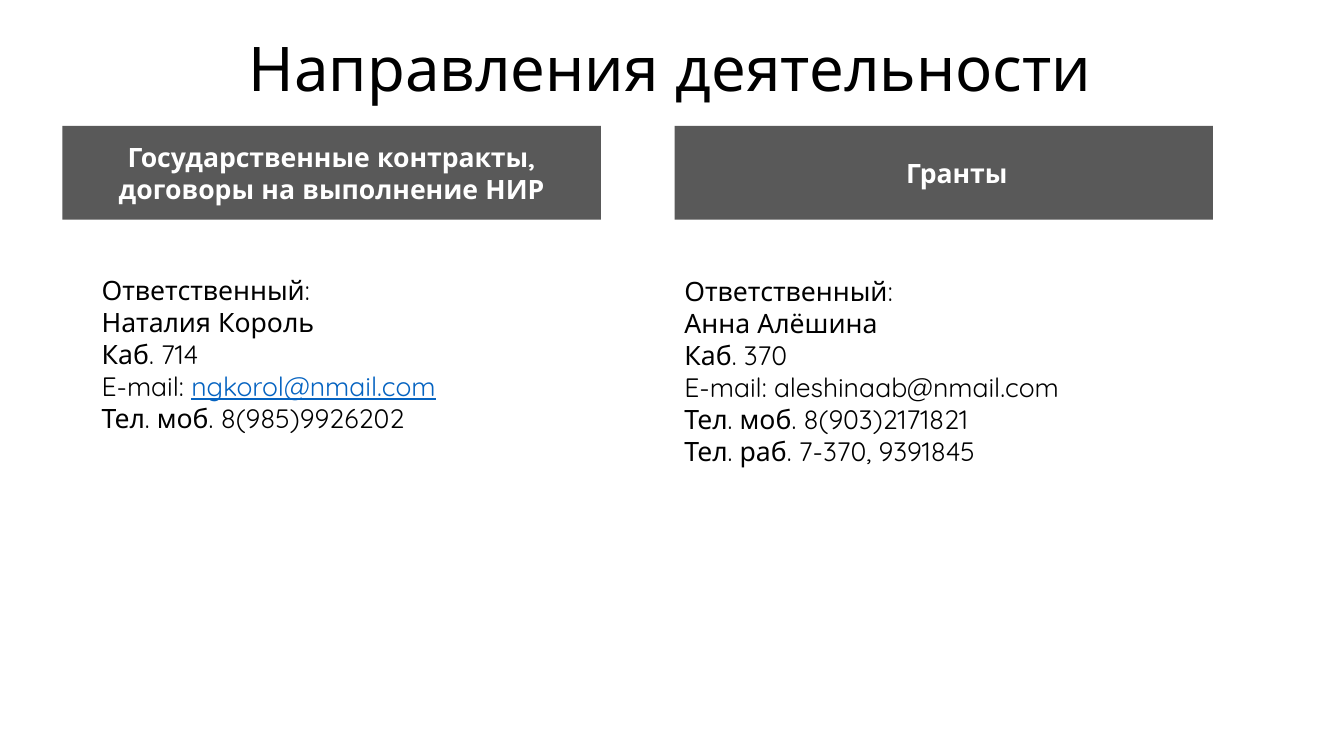
from dataclasses import dataclass

from pptx import Presentation
from pptx.dml.color import RGBColor
from pptx.enum.shapes import MSO_SHAPE
from pptx.enum.text import MSO_ANCHOR, MSO_AUTO_SIZE, PP_ALIGN
from pptx.slide import Slide
from pptx.text.text import Font
from pptx.util import Inches, Pt

FONT = "Quicksand"
BLACK = RGBColor(0x00, 0x00, 0x00)
WHITE = RGBColor(0xFF, 0xFF, 0xFF)
GRAY = RGBColor(0x59, 0x59, 0x59)
LINK_BLUE = RGBColor(0x05, 0x63, 0xC1)


@dataclass
class Direction:
    heading: str
    bar_left: float
    heading_left: float
    contact_left: float
    contact_top: float
    contact_height: float
    contact: list[str]
    underlined: str = ""


DIRECTIONS = [
    Direction(
        "Государственные контракты, договоры на выполнение НИР",
        0.62, 0.76, 0.91, 2.67, 1.7,
        ["Ответственный:", "Наталия Король", "Каб. 714",
         "E-mail: ngkorol@nmail.com", "Тел. моб. 8(985)9926202"],
        underlined="ngkorol@nmail.com",
    ),
    Direction(
        "Гранты",
        6.69, 6.96, 6.69, 2.68, 2.02,
        ["Ответственный:", "Анна Алёшина", "Каб. 370",
         "E-mail: aleshinaab@nmail.com", "Тел. моб. 8(903)2171821",
         "Тел. раб. 7-370, 9391845"],
    ),
]


def set_font(font: Font, size: float, color: RGBColor, bold: bool = False) -> None:
    font.name = FONT
    font.size = Pt(size)
    font.bold = bold
    font.color.rgb = color


def add_title(slide: Slide, text: str) -> None:
    title = slide.shapes.title
    title.left, title.top = Inches(-0.03), Inches(0.16)
    title.width, title.height = Inches(13.36), Inches(1.1)
    tf = title.text_frame
    tf.text = text
    tf.vertical_anchor = MSO_ANCHOR.MIDDLE
    p = tf.paragraphs[0]
    p.alignment = PP_ALIGN.CENTER
    p.line_spacing = 0.9
    set_font(p.font, 44, BLACK)


def add_heading(slide: Slide, direction: Direction) -> None:
    group = slide.shapes.add_group_shape()
    bar = group.shapes.add_shape(
        MSO_SHAPE.RECTANGLE, Inches(direction.bar_left), Inches(1.25),
        Inches(5.34), Inches(0.93))
    bar.shadow.inherit = False
    bar.fill.solid()
    bar.fill.fore_color.rgb = GRAY
    bar.line.fill.background()

    label = group.shapes.add_textbox(
        Inches(direction.heading_left), Inches(1.36), Inches(5.06), Inches(0.71))
    tf = label.text_frame
    tf.word_wrap = True
    tf.vertical_anchor = MSO_ANCHOR.MIDDLE
    p = tf.paragraphs[0]
    p.text = direction.heading
    p.alignment = PP_ALIGN.CENTER
    set_font(p.font, 19, WHITE, bold=True)


def add_contact(slide: Slide, direction: Direction) -> None:
    box = slide.shapes.add_textbox(
        Inches(direction.contact_left), Inches(direction.contact_top),
        Inches(4.91), Inches(direction.contact_height))
    tf = box.text_frame
    tf.word_wrap = True
    tf.auto_size = MSO_AUTO_SIZE.SHAPE_TO_FIT_TEXT
    for i, line in enumerate(direction.contact):
        p = tf.add_paragraph() if i else tf.paragraphs[0]
        set_font(p.font, 19, BLACK)
        if direction.underlined and line.endswith(direction.underlined):
            p.add_run().text = line.removesuffix(direction.underlined)
            r = p.add_run()
            r.text = direction.underlined
            r.font.underline = True
            r.font.color.rgb = LINK_BLUE
        else:
            p.add_run().text = line


def main() -> None:
    prs = Presentation()
    prs.slide_width, prs.slide_height = Inches(13.33), Inches(7.5)
    slide = prs.slides.add_slide(prs.slide_layouts.get_by_name("Title Only"))
    add_title(slide, "Направления деятельности")
    for direction in DIRECTIONS:
        add_heading(slide, direction)
        add_contact(slide, direction)
    prs.save("out.pptx")


if __name__ == "__main__":
    main()
